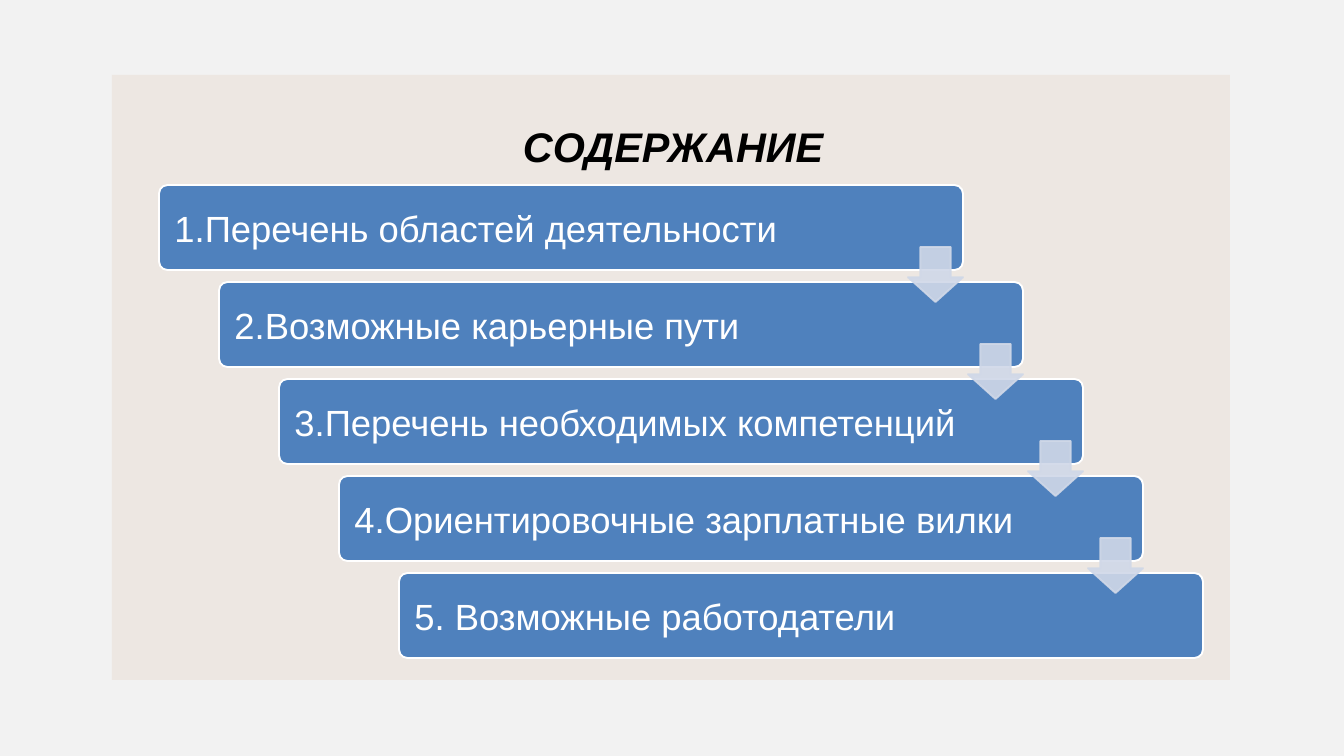
from dataclasses import dataclass

import lxml.etree
import pptx
import pptx.dml.color
import pptx.enum.shapes
import pptx.enum.text
import pptx.oxml.ns
import pptx.util

PX = 914400 / 67.2  # EMU per px
SHAPES = pptx.enum.shapes.MSO_SHAPE
ANCHOR = pptx.enum.text.MSO_ANCHOR
ALIGN = pptx.enum.text.PP_ALIGN


def px(length):
    return pptx.util.Emu(round(length * PX))


def rgb(code):
    return pptx.dml.color.RGBColor.from_string(code)


@dataclass(frozen=True)
class Theme:
    font: str = "Arial"
    background: str = "F2F2F2"
    panel: str = "E4D4C5"
    bar: str = "4F81BD"
    bar_text: str = "FFFFFF"
    arrow: str = "D0D8E8"
    heading: str = "000000"
    heading_size: float = 44.3
    bar_size: float = 39
    outline: float = 2


class ContentsSlide:
    """Holds the theme and the slide being built."""

    def __init__(self, slide, theme):
        self.slide = slide
        self.theme = theme
        slide.background.fill.solid()
        slide.background.fill.fore_color.rgb = rgb(theme.background)

    def shape(self, kind, box, fill, line=None, opacity=100, adjustments=()):
        shape = self.slide.shapes.add_shape(kind, *map(px, box))
        shape.shadow.inherit = False
        for index, value in enumerate(adjustments):
            shape.adjustments[index] = value
        shape.fill.solid()
        shape.fill.fore_color.rgb = rgb(fill)
        if line:
            shape.line.color.rgb = rgb(line)
            shape.line.width = pptx.util.Pt(self.theme.outline)
        else:
            shape.line.fill.background()
        if opacity < 100:
            qn = pptx.oxml.ns.qn
            for color in list(shape._element.spPr.iter(qn("a:srgbClr"))):
                alpha = lxml.etree.SubElement(color, qn("a:alpha"))
                alpha.set("val", str(opacity * 1000))
        return shape

    def label(self, shape, text, size, color, anchor, inset):
        frame = shape.text_frame
        frame.text = text
        frame.word_wrap = True
        frame.auto_size = pptx.enum.text.MSO_AUTO_SIZE.NONE
        frame.vertical_anchor = anchor
        frame.margin_left = frame.margin_right = px(inset)
        frame.margin_top = frame.margin_bottom = px(inset)
        paragraph = frame.paragraphs[0]
        paragraph.alignment = ALIGN.LEFT
        font = paragraph.runs[0].font
        font.name = self.theme.font
        font.size = pptx.util.Pt(size)
        font.color.rgb = rgb(color)
        return paragraph

    def panel(self, box):
        self.shape(SHAPES.RECTANGLE, box, self.theme.panel, opacity=35)

    def heading(self, text, box):
        title = self.slide.shapes.title
        title.left, title.top, title.width, title.height = map(px, box)
        paragraph = self.label(title, text, self.theme.heading_size,
                               self.theme.heading, ANCHOR.TOP, 0)
        paragraph.line_spacing = 1.28
        paragraph.runs[0].font.bold = True
        paragraph.runs[0].font.italic = True
        # Bring the title in front of the translucent panel
        self.slide.shapes._spTree.append(title._element)

    def bar(self, text, box):
        bar = self.shape(SHAPES.ROUNDED_RECTANGLE, box, self.theme.bar,
                         self.theme.bar_text, adjustments=[0.1])
        self.label(bar, text, self.theme.bar_size, self.theme.bar_text,
                   ANCHOR.MIDDLE, 13)

    def arrow(self, box):
        self.shape(SHAPES.DOWN_ARROW, box, self.theme.arrow, self.theme.arrow,
                   opacity=90, adjustments=[0.55, 0.45])


def main():
    deck = pptx.Presentation()
    deck.slide_width, deck.slide_height = px(1344), px(756)
    title_only = deck.slide_layouts[5]
    contents = ContentsSlide(deck.slides.add_slide(title_only), Theme())

    # Panel and heading
    contents.panel((112, 75, 1118, 605))
    contents.heading("СОДЕРЖАНИЕ", (523, 107, 527, 64))

    # Staircase of topics
    topics = [
        "1.Перечень областей деятельности",
        "2.Возможные карьерные пути",
        "3.Перечень необходимых компетенций",
        "4.Ориентировочные зарплатные вилки",
        "5. Возможные работодатели",
    ]
    step_x, step_y = 60, 97
    for step, topic in enumerate(topics):
        contents.bar(topic, (159 + step * step_x, 185 + step * step_y, 804, 85))

    # Arrows from each topic to the next
    for step in range(len(topics) - 1):
        contents.arrow((908 + step * step_x, 247 + step * step_y, 55, 55))

    deck.save("out.pptx")


if __name__ == "__main__":
    main()
